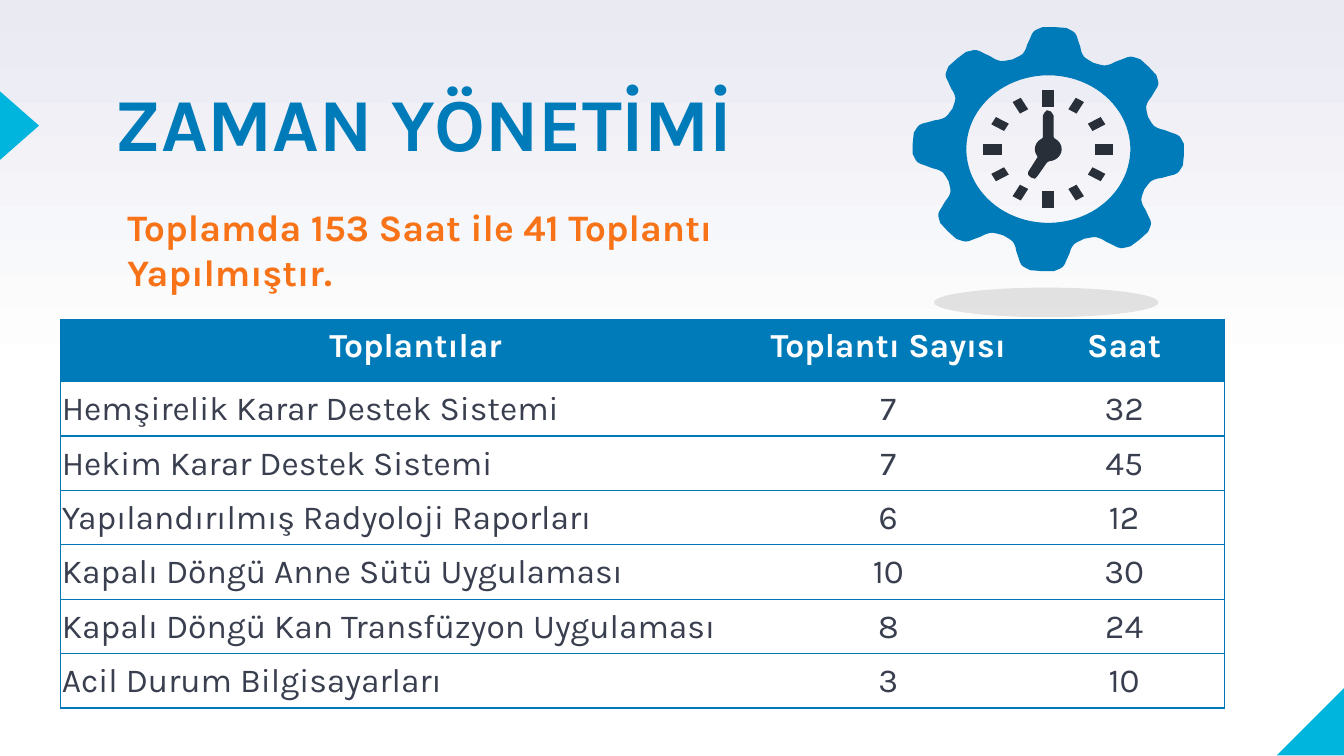
from math import cos, radians, sin

from lxml import etree
from pptx import Presentation
from pptx.dml.color import RGBColor
from pptx.enum.shapes import MSO_SHAPE
from pptx.enum.text import MSO_ANCHOR, MSO_AUTO_SIZE, PP_ALIGN
from pptx.oxml.ns import qn
from pptx.util import Inches, Pt

BLUE = RGBColor(0x00, 0x7B, 0xB9)
BORDER = RGBColor(0x00, 0x78, 0xB5)
CYAN = RGBColor(0x00, 0xB5, 0xDD)
ORANGE = RGBColor(0xF8, 0x73, 0x18)
INK = RGBColor(0x3A, 0x3F, 0x50)
DARK = RGBColor(0x28, 0x2F, 0x39)
WHITE = RGBColor(0xFF, 0xFF, 0xFF)
LAVENDER = RGBColor(0xE9, 0xEA, 0xF2)
BLACK = RGBColor(0x00, 0x00, 0x00)

ELLIPSE = MSO_SHAPE.OVAL
TRIANGLE = MSO_SHAPE.ISOSCELES_TRIANGLE
CORNER = MSO_SHAPE.RIGHT_TRIANGLE
LEFT, CENTER = PP_ALIGN.LEFT, PP_ALIGN.CENTER
TOP, MIDDLE = MSO_ANCHOR.TOP, MSO_ANCHOR.MIDDLE
FIT_SHAPE = MSO_AUTO_SIZE.SHAPE_TO_FIT_TEXT

FONT = "Karla"
CLOCK_X, CLOCK_Y = 7.8, 1.11
SQUASH = 0.9
HALF_TOOTH = [(0, 1), (5, 1), (6.5, 0.99), (8, 0.98), (9, 0.97), (10, 0.95),
              (11, 0.92), (13, 0.87), (14, 0.84), (15, 0.82), (16.5, 0.8),
              (18.5, 0.79), (22.5, 0.78)]
HANDS = [(7.84, 0.86), (7.84, 1.02), (7.86, 1.05), (7.89, 1.11), (7.87, 1.17),
         (7.82, 1.19), (7.79, 1.21), (7.72, 1.31), (7.7, 1.33), (7.67, 1.32),
         (7.65, 1.3), (7.65, 1.28), (7.72, 1.17), (7.72, 1.15), (7.71, 1.09),
         (7.75, 1.04), (7.76, 1.02), (7.76, 0.86), (7.77, 0.84), (7.79, 0.82),
         (7.82, 0.83)]

HEADINGS = ["Toplantılar", "Toplantı Sayısı", "Saat"]
MEETINGS = [
    ("Hemşirelik Karar Destek Sistemi", 7, 32),
    ("Hekim Karar Destek Sistemi", 7, 45),
    ("Yapılandırılmış Radyoloji Raporları", 6, 12),
    ("Kapalı Döngü Anne Sütü Uygulaması", 10, 30),
    ("Kapalı Döngü Kan Transfüzyon Uygulaması", 8, 24),
    ("Acil Durum Bilgisayarları", 3, 10),
]


def write(paragraph, text, size, color, bold):
    run = paragraph.add_run()
    run.text = text
    run.font.name = FONT
    run.font.size = Pt(size)
    run.font.bold = bold
    run.font.color.rgb = color


def paint(shape, color):
    shape.shadow.inherit = False
    shape.fill.solid()
    shape.fill.fore_color.rgb = color
    shape.line.fill.background()


def add_preset(shapes, preset, box, color, rotation=0):
    shape = shapes.add_shape(preset, *map(Inches, box))
    shape.rotation = rotation
    paint(shape, color)
    return shape


def add_outline(shapes, contours, color):
    contours = [[(Inches(x), Inches(y)) for x, y in contour] for contour in contours]
    builder = shapes.build_freeform(*contours[0][0])
    builder.add_line_segments(contours[0][1:])
    for contour in contours[1:]:
        builder.move_to(*contour[0])
        builder.add_line_segments(contour[1:])
    paint(builder.convert_to_shape(), color)


def on_dial(angle, radius, offset=0):
    turn = radians(angle)
    across = radius * sin(turn) + offset * cos(turn)
    up = radius * cos(turn) - offset * sin(turn)
    return CLOCK_X + across, CLOCK_Y - SQUASH * up


def add_gear_clock(slide):
    clock = slide.shapes.add_group_shape().shapes
    shade = add_preset(clock, ELLIPSE, (6.95, 2.14, 1.67, 0.22), BLACK)
    tint = shade._element.spPr.find(qn("a:solidFill"))[0]
    etree.SubElement(tint, qn("a:alpha"), val="10000")

    tooth = [(-a, r) for a, r in HALF_TOOTH[:0:-1]] + HALF_TOOTH[:-1]
    rim = [on_dial(45 * n + 2.7 + a, 1.01 * r) for n in range(8) for a, r in tooth]
    opening = [on_dial(-a, 0.61) for a in range(0, 360, 4)]
    add_outline(clock, [rim, opening], BLUE)

    add_outline(clock, [HANDS], DARK)
    for hour in range(12):
        length, width = (0.14, 0.09) if hour % 3 == 0 else (0.11, 0.07)
        inner, outer = 0.415 - length / 2, 0.415 + length / 2
        corners = [(inner, -width / 2), (outer, -width / 2),
                   (outer, width / 2), (inner, width / 2)]
        add_outline(clock, [[on_dial(30 * hour, r, o) for r, o in corners]], DARK)
    add_preset(clock, ELLIPSE, (7.7, 1.02, 0.2, 0.18), DARK)


def set_border(cell, side, visible):
    line = etree.SubElement(cell._tc.get_or_add_tcPr(), qn("a:ln" + side), w=str(Pt(0.75)))
    if visible:
        fill = etree.SubElement(line, qn("a:solidFill"))
        etree.SubElement(fill, qn("a:srgbClr"), val=str(BORDER))
    else:
        etree.SubElement(line, qn("a:noFill"))


def add_meeting_table(slide):
    rows = [HEADINGS, *MEETINGS]
    frame = slide.shapes.add_table(len(rows), len(HEADINGS), Inches(0.45), Inches(2.38),
                                   Inches(8.66), Inches(2.89))
    table = frame.table
    table.first_row = table.horz_banding = False
    for column, width in zip(table.columns, (5.15, 2.02, 1.49)):
        column.width = Inches(width)
    for r, values in enumerate(rows):
        header = r == 0
        table.rows[r].height = Inches(0.46 if header else 2.43 / len(MEETINGS))
        for c, value in enumerate(values):
            cell = table.cell(r, c)
            for side, visible in (("L", c == 0), ("R", c == 2), ("T", True), ("B", True)):
                set_border(cell, side, visible)
            if header:
                cell.fill.solid()
                cell.fill.fore_color.rgb = BLUE
                if c == 0:
                    cell.margin_left = Inches(2)
            else:
                cell.fill.background()
                cell.margin_left = cell.margin_right = cell.margin_top = Inches(0.01)
                cell.margin_bottom = 0
            cell.vertical_anchor = TOP if header else MIDDLE
            paragraph = cell.text_frame.paragraphs[0]
            paragraph.alignment = LEFT if c == 0 else CENTER
            write(paragraph, str(value), 18, WHITE if header else INK, header)


def set_background(slide):
    fill = slide.background.fill
    fill.gradient()
    fill.gradient_angle = 90
    for stop, position, color in zip(fill.gradient_stops, (0.5, 1), (WHITE, LAVENDER)):
        stop.position = position
        stop.color.rgb = color


def set_title(slide, text):
    title = slide.shapes.title
    title.left, title.top, title.width, title.height = map(Inches, (0.85, 0.7, 5.39, 0.67))
    frame = title.text_frame
    frame.margin_left = frame.margin_right = frame.margin_top = frame.margin_bottom = 0
    frame.vertical_anchor = TOP
    paragraph = frame.paragraphs[0]
    paragraph.alignment = LEFT
    paragraph.line_spacing = 0.8
    write(paragraph, text, 40, BLUE, True)


def add_summary(slide, text):
    box = slide.shapes.add_textbox(*map(Inches, (0.85, 1.47, 6.11, 0.44)))
    box.text_frame.word_wrap = True
    box.text_frame.auto_size = FIT_SHAPE
    write(box.text_frame.paragraphs[0], text, 20, ORANGE, True)


def main():
    deck = Presentation()
    deck.slide_width, deck.slide_height = Inches(10), Inches(10 * 9 / 16)
    slide = deck.slides.add_slide(deck.slide_layouts[5])
    set_background(slide)
    add_preset(slide.shapes, CORNER, (9.5, 5.11, 0.51, 0.51), CYAN, 270)
    add_preset(slide.shapes, TRIANGLE, (-0.11, 0.79, 0.51, 0.29), CYAN, 90)
    set_title(slide, "ZAMAN YÖNETİMİ")
    add_gear_clock(slide)
    add_meeting_table(slide)
    add_summary(slide, "Toplamda 153 Saat ile 41 Toplantı Yapılmıştır.")
    deck.save("out.pptx")


if __name__ == "__main__":
    main()
